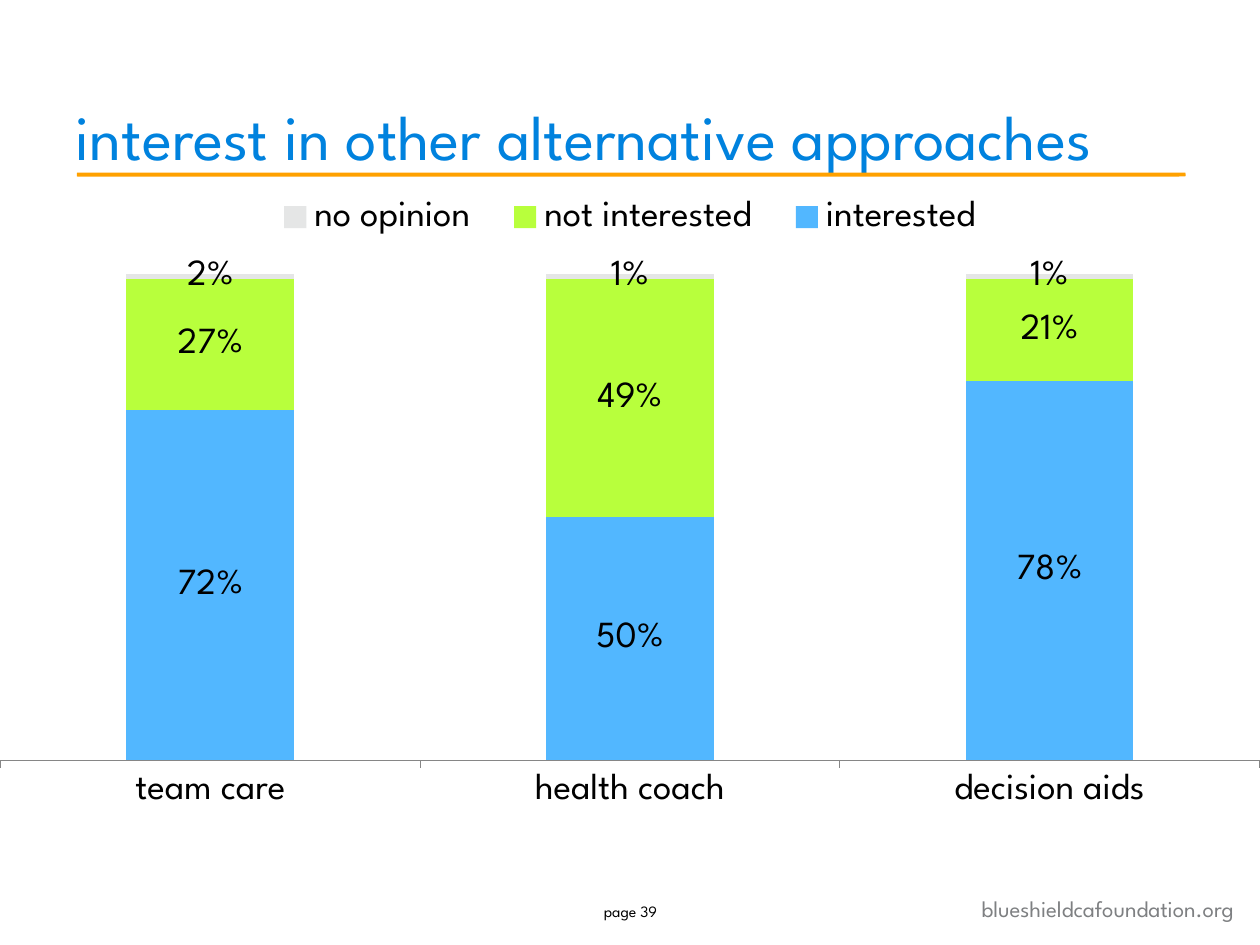
"""Build the slide on interest in alternative care approaches."""
import pptx
import pptx.chart.data
import pptx.dml.color
import pptx.enum.chart
import pptx.enum.shapes
import pptx.enum.text
import pptx.oxml
import pptx.oxml.ns
import pptx.util
from pptx.util import Cm

ALIGN = pptx.enum.text.PP_ALIGN
ANCHOR = pptx.enum.text.MSO_ANCHOR


def rgb(value):
    return pptx.dml.color.RGBColor.from_string(value)


def format_font(font, size, color="000000", face="League Spartan"):
    font.name = face
    font.size = pptx.util.Pt(size)
    font.color.rgb = rgb(color)
    font.bold = False


def write(frame, text, size, color="000000", align=ALIGN.LEFT, anchor=ANCHOR.TOP, spacing=None):
    frame.word_wrap = True
    frame.auto_size = pptx.enum.text.MSO_AUTO_SIZE.NONE
    frame.vertical_anchor = anchor
    line = frame.paragraphs[0]
    line.alignment = align
    if spacing:
        line.line_spacing = pptx.util.Pt(spacing)
    run = line.add_run()
    run.text = text
    format_font(run.font, size, color)


def set_layout(element, x, y, w, h, inner=False):
    namespace = pptx.oxml.ns.nsdecls("c")
    target = '<c:layoutTarget val="inner"/>' if inner else ""
    modes = "".join(f'<c:{side}Mode val="edge"/>' for side in "xy")
    sizes = "".join(f'<c:{key} val="{value}"/>' for key, value in zip("xywh", (x, y, w, h)))
    layout = pptx.oxml.parse_xml(
        f"<c:layout {namespace}><c:manualLayout>{target}{modes}{sizes}</c:manualLayout></c:layout>"
    )
    for previous in element.findall(pptx.oxml.ns.qn("c:layout")):
        element.remove(previous)
    position = 1 if element.tag == pptx.oxml.ns.qn("c:legend") else 0
    element.insert(position, layout)


class Deck:
    blue, orange, gray = "0082DE", "FFA100", "7E8082"
    label_size = 21

    def __init__(self):
        self.presentation = pptx.Presentation()
        self.presentation.slide_width = Cm(25.4)
        self.presentation.slide_height = Cm(19.05)
        self.slide = self.presentation.slides.add_slide(self.presentation.slide_layouts[5])

    def title(self, text, left, top, width, height):
        heading = self.slide.shapes.title
        heading.left, heading.top, heading.width, heading.height = left, top, width, height
        write(heading.text_frame, text, 36, self.blue, anchor=ANCHOR.BOTTOM, spacing=42)

    def text(self, text, left, top, width, height, **style):
        box = self.slide.shapes.add_textbox(left, top, width, height)
        write(box.text_frame, text, **style)

    def rule(self, left, top, width, height):
        underline = self.slide.shapes.add_shape(
            pptx.enum.shapes.MSO_SHAPE.ROUNDED_RECTANGLE, left, top, width, height
        )
        underline.shadow.inherit = False
        underline.fill.solid()
        underline.fill.fore_color.rgb = rgb(self.orange)
        underline.line.fill.background()

    def stacked_chart(self, categories, answers, left, top, width, height):
        data = pptx.chart.data.CategoryChartData(number_format="0%")
        data.categories = categories
        for answer, shares, _ in answers:
            data.add_series(answer, shares)
        chart = self.slide.shapes.add_chart(
            pptx.enum.chart.XL_CHART_TYPE.COLUMN_STACKED, left, top, width, height, data
        ).chart
        chart.has_title = False
        format_font(chart.font, 18)

        columns = chart.plots[0]
        columns.gap_width, columns.overlap = 150, 100
        columns.vary_by_categories = False
        for series, (_, _, color) in zip(columns.series, answers):
            series.format.fill.solid()
            series.format.fill.fore_color.rgb = rgb(color)
            labels = series.data_labels
            labels.show_value = True
            labels.number_format, labels.number_format_is_linked = "0%", False
            labels.position = pptx.enum.chart.XL_LABEL_POSITION.CENTER
            format_font(labels.font, self.label_size)

        shares_axis = chart.value_axis
        shares_axis.minimum_scale, shares_axis.maximum_scale = 0, 1
        shares_axis.has_major_gridlines = False
        shares_axis.visible = False
        approaches_axis = chart.category_axis
        approaches_axis.major_tick_mark = pptx.enum.chart.XL_TICK_MARK.OUTSIDE
        approaches_axis.format.line.color.rgb = rgb("868686")
        format_font(approaches_axis.tick_labels.font, self.label_size)

        chart.has_legend = True
        chart.legend.position = pptx.enum.chart.XL_LEGEND_POSITION.RIGHT
        chart.legend.include_in_layout = False
        format_font(chart.legend.font, self.label_size)
        plot_area = columns._element.getparent()
        set_layout(plot_area, 0, 0.137, 1, 0.702, inner=True)
        set_layout(chart.legend._element, 0.2, 0.01, 0.6, 0.09)


def main():
    deck = Deck()
    deck.text("blueshieldcafoundation.org", Cm(18.29), Cm(17.91), Cm(6.83), Cm(0.81),
              size=13, color=deck.gray, align=ALIGN.RIGHT)
    deck.rule(Cm(1.55), Cm(3.48), Cm(22.35), Cm(0.08))
    deck.title("interest in other alternative approaches", Cm(1.27), Cm(0.64), Cm(22.86), Cm(2.97))
    deck.stacked_chart(
        ["team care", "health coach", "decision aids"],
        [
            ("interested", (0.72, 0.5, 0.78), "52B7FF"),
            ("not interested", (0.27, 0.49, 0.21), "B8FF3C"),
            ("no opinion", (0.02, 0.01, 0.01), "E5E6E6"),
        ],
        Cm(0), Cm(3.61), Cm(25.4), Cm(13.97),
    )
    deck.text("page 39", Cm(11.58), Cm(17.7), Cm(2.26), Cm(1.32),
              size=9, align=ALIGN.CENTER, anchor=ANCHOR.MIDDLE)
    deck.presentation.save("out.pptx")


if __name__ == "__main__":
    main()
